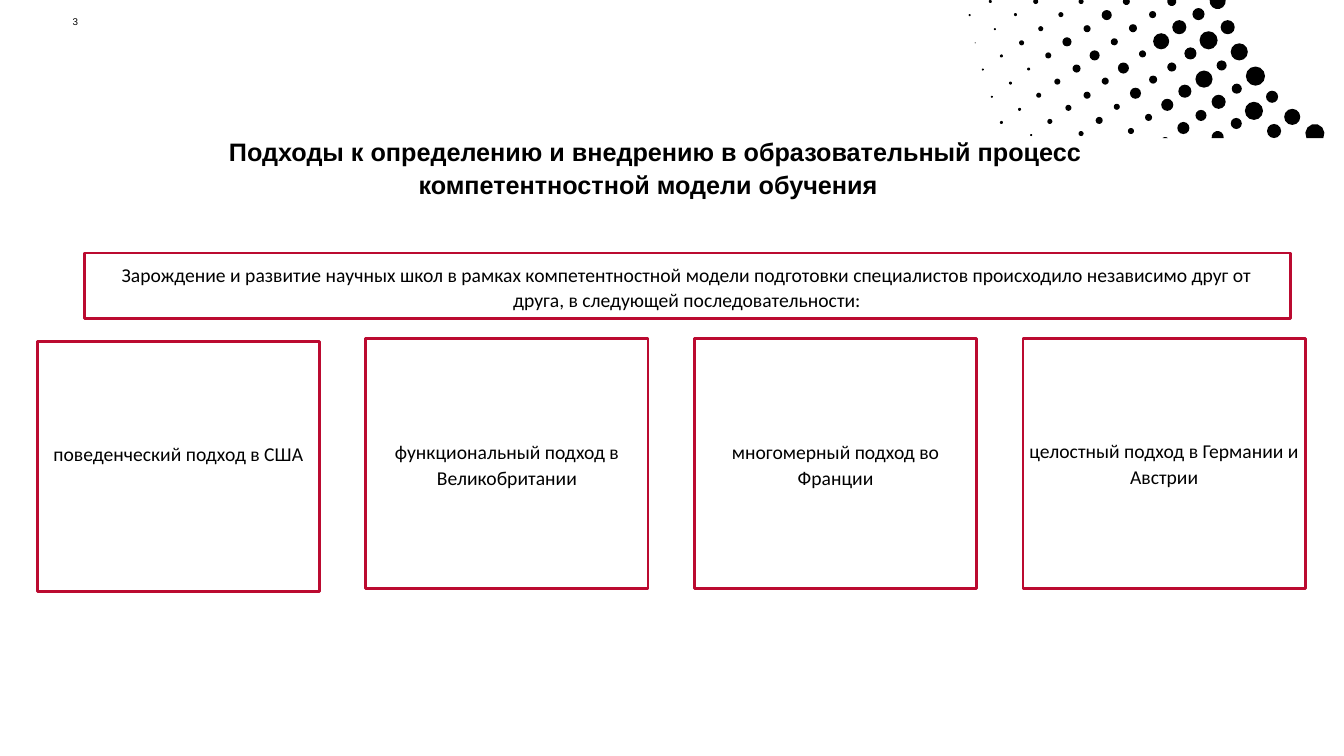
from math import asin, cos, pi, sin

from pptx import Presentation
from pptx.dml.color import RGBColor
from pptx.enum.shapes import MSO_SHAPE as SHAPE
from pptx.enum.text import MSO_ANCHOR as ANCHOR, PP_ALIGN as ALIGN
from pptx.util import Pt

PX = 9144  # 100 px to the inch
BLACK, WHITE, CRIMSON = "000000", "FFFFFF", "BB0A30"


def style(shape, fill, line=None):
    shape.shadow.inherit = False
    shape.fill.solid()
    shape.fill.fore_color.rgb = RGBColor.from_string(fill)
    if line:
        shape.line.color.rgb = RGBColor.from_string(line)
        shape.line.width = Pt(2)
    else:
        shape.line.fill.background()


def write(shape, text, size, font, align=ALIGN.CENTER, anchor=ANCHOR.TOP, spacing=1.1, bold=False):
    frame = shape.text_frame
    frame.word_wrap = True
    frame.vertical_anchor = anchor
    frame.margin_left = frame.margin_top = frame.margin_right = frame.margin_bottom = 0
    paragraph = frame.paragraphs[0]
    paragraph.alignment = align
    paragraph.line_spacing = spacing
    run = paragraph.add_run()
    run.text = text
    run.font.size = Pt(size)
    run.font.name = font
    run.font.bold = bold
    run.font.color.rgb = RGBColor.from_string(BLACK)
    return paragraph


deck = Presentation()
deck.slide_height = 750 * PX
deck.slide_width = deck.slide_height * 16 // 9
slide = deck.slides.add_slide(deck.slide_layouts[6])
shapes = slide.shapes

# Halftone corner: left, top, diameter of each dot, by diagonal row
BAND_BOTTOM = 137
ARC_STEPS = 7
halftone = [
    (1295, 123, 19), (1274, 108, 16), (1256, 90, 12), (1236, 66, 19), (1221, 43, 17),
    (1211, 20, 14), (1200, -7, 16),
    (1257, 123, 14), (1235, 101, 18), (1222, 83, 10), (1207, 60, 10), (1190, 31, 18),
    (1183, 8, 12),
    (1221, 117, 11), (1202, 94, 14), (1186, 70, 17), (1175, 47, 12), (1163, 20, 14),
    (1158, -3, 9),
    (1202, 130, 12), (1186, 109, 11), (1169, 84, 13), (1158, 62, 9), (1144, 33, 16),
    (1140, 11, 7),
    (1168, 121, 12), (1152, 98, 12), (1140, 75, 8), (1130, 50, 7), (1120, 24, 8),
    (1114, -2, 7),
    (1152, 136, 8), (1136, 113, 7), (1121, 87, 11), (1109, 62, 11), (1102, 38, 7),
    (1093, 10, 10),
    (1119, 127, 6), (1105, 103, 6), (1093, 77, 7), (1081, 50, 10), (1075, 25, 7),
    (1070, -1, 5),
    (1087, 116, 7), (1075, 91, 7), (1064, 64, 8), (1054, 37, 9), (1050, 12, 5),
    (1070, 130, 5), (1057, 104, 6), (1046, 78, 6), (1037, 52, 6), (1030, 26, 5),
    (1025, -1, 5),
    (1039, 118, 5), (1028, 92, 5), (1019, 67, 3), (1011, 40, 5), (1006, 13, 3),
    (1022, 133, 2), (1010, 107, 3), (1001, 81, 3), (992, 54, 3), (986, 28, 2),
    (981, 0, 3),
    (992, 120, 3), (983, 95, 2), (974, 68, 2), (967, 42, 1), (961, 14, 2),
]
for left, top, size in halftone:
    if top >= -1 and top + size <= BAND_BOTTOM:
        dot = shapes.add_shape(SHAPE.OVAL, left * PX, top * PX, size * PX, size * PX)
    else:
        # A dot crossing the edge of the band is an arc closed by a flat cut
        radius = size / 2
        center_x, center_y = left + radius, top + radius
        edge, side = (0, 1) if top < 0 else (BAND_BOTTOM, -1)
        start = asin(side * (edge - center_y) / radius)
        sweep = pi - 2 * start
        angles = [start + sweep * step / ARC_STEPS for step in range(ARC_STEPS + 1)]
        rim = [((center_x + radius * cos(angle)) * PX, (center_y + side * radius * sin(angle)) * PX)
               for angle in angles]
        outline = shapes.build_freeform(*rim[0], scale=1.0)
        outline.add_line_segments(rim[1:], close=True)
        dot = outline.convert_to_shape()
    style(dot, BLACK)

# Title, its first line set in slightly
title = shapes.add_textbox(135 * PX, 132 * PX, 1016 * PX, 77 * PX)
heading = write(title, "Подходы к определению и внедрению в образовательный процесс "
                "компетентностной модели обучения", 18, "Arial", bold=True)
heading._p.get_or_add_pPr().set("indent", str(14 * PX))

# Slide number
number = shapes.add_textbox(72 * PX, 13 * PX, 52 * PX, 17 * PX)
write(number, "3", 7, "Arial", ALIGN.LEFT, ANCHOR.MIDDLE, 1.0)

# Four approaches: top of the box, and bottom inset that raises its text
approaches = [
    ("поведенческий подход в США", 339, 28),
    ("функциональный подход в Великобритании", 336, 0),
    ("многомерный подход во Франции", 336, 0),
    ("целостный подход в Германии и Австрии", 336, 2),
]
for column, (approach, top, inset) in enumerate(approaches):
    box = shapes.add_shape(SHAPE.RECTANGLE, (37 + 326 * column) * PX, top * PX, 280 * PX, 248 * PX)
    style(box, WHITE, CRIMSON)
    write(box, approach, 14, "Calibri", anchor=ANCHOR.MIDDLE)
    box.text_frame.margin_bottom = inset * PX

# Introductory statement in its frame
intro_frame = shapes.add_shape(SHAPE.RECTANGLE, 84 * PX, 251 * PX, 1196 * PX, 65 * PX)
style(intro_frame, WHITE, CRIMSON)
intro = shapes.add_textbox(102 * PX, 258 * PX, 1159 * PX, 51 * PX)
write(intro, "Зарождение и развитие научных школ в рамках компетентностной модели подготовки "
      "специалистов происходило независимо друг от друга, в следующей последовательности:",
      14, "Calibri")

deck.save("out.pptx")
